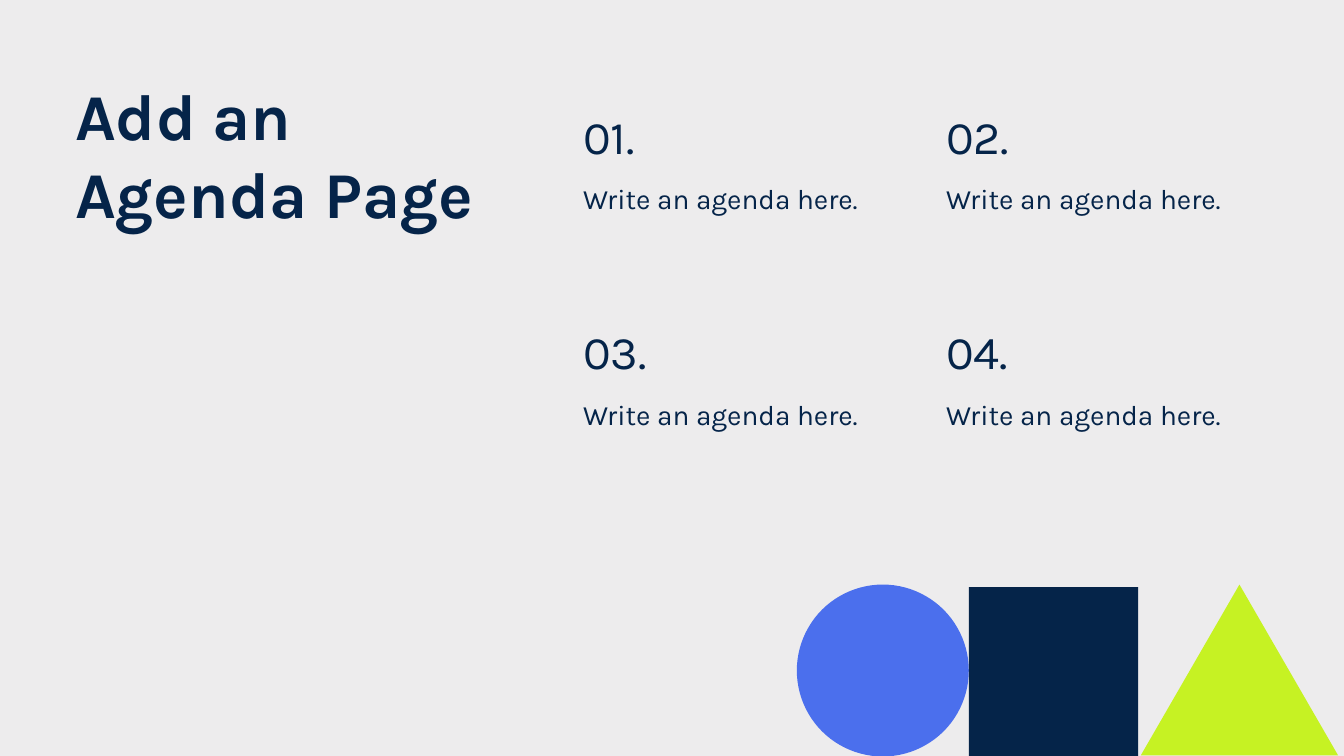
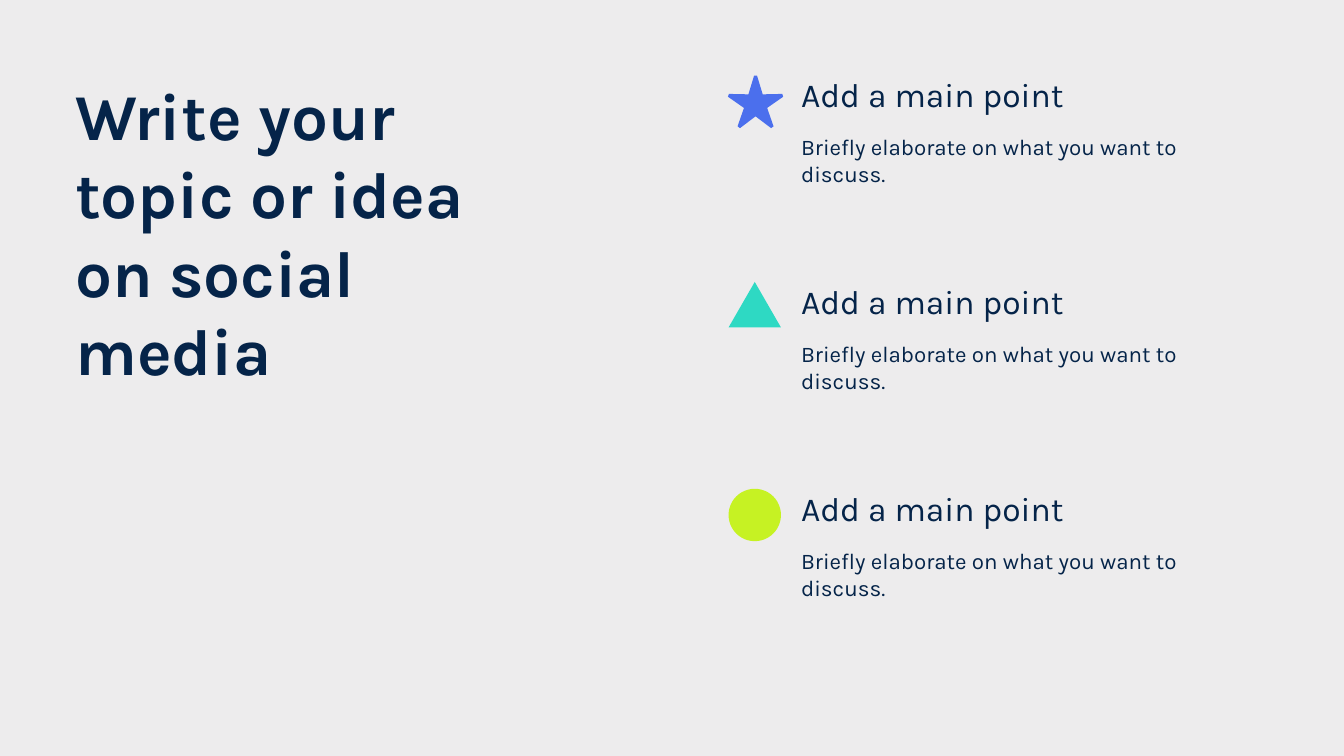
import math
from dataclasses import dataclass

import pptx
import pptx.dml.color
import pptx.enum.shapes
import pptx.enum.text
import pptx.shapes.autoshape
import pptx.slide
import pptx.util

Cm = pptx.util.Cm
Kind = pptx.enum.shapes.MSO_SHAPE

COLORS = {
    "background": "EDECED",
    "navy": "052449",
    "blue": "4B6FED",
    "lime": "C6F223",
    "teal": "2ED9C3",
}
FONT = "Karla"
MARGIN = 1.42


@dataclass(frozen=True)
class Figure:
    """A plain coloured preset shape, measured in centimetres."""
    kind: Kind
    left: float
    top: float
    width: float
    height: float
    color: str


@dataclass(frozen=True)
class EntryStyle:
    """Measures of a heading with a body line below it."""
    width: float
    heading_height: float
    heading_size: int
    body_offset: float
    body_height: float
    body_size: int


AGENDA_STYLE = EntryStyle(5.84, 1.07, 25, 1.41, 0.64, 15)
POINT_STYLE = EntryStyle(7.16, 0.76, 18, 1.12, 1.02, 12)


def rgb(name: str) -> pptx.dml.color.RGBColor:
    return pptx.dml.color.RGBColor.from_string(COLORS[name])


# Shared building blocks
def add_text(slide: pptx.slide.Slide, text: str, *, left: float, top: float,
             width: float, height: float, size: int, bold: bool = False) -> None:
    box = slide.shapes.add_textbox(Cm(left), Cm(top), Cm(width), Cm(height))
    frame = box.text_frame
    frame.word_wrap = True
    frame.auto_size = pptx.enum.text.MSO_AUTO_SIZE.SHAPE_TO_FIT_TEXT
    frame.margin_left = frame.margin_right = 0
    frame.margin_top = frame.margin_bottom = 0
    run = frame.paragraphs[0].add_run()
    run.text = text
    run.font.name = FONT
    run.font.size = pptx.util.Pt(size)
    run.font.bold = bold
    run.font.color.rgb = rgb("navy")


def add_entry(slide: pptx.slide.Slide, heading: str, body: str,
              left: float, top: float, style: EntryStyle) -> None:
    add_text(slide, heading, left=left, top=top, width=style.width,
             height=style.heading_height, size=style.heading_size)
    add_text(slide, body, left=left, top=top + style.body_offset, width=style.width,
             height=style.body_height, size=style.body_size)


def paint(shape: pptx.shapes.autoshape.Shape, color: str) -> None:
    shape.shadow.inherit = False
    shape.fill.solid()
    shape.fill.fore_color.rgb = rgb(color)
    shape.line.fill.background()


def add_figure(slide: pptx.slide.Slide, figure: Figure) -> None:
    shape = slide.shapes.add_shape(figure.kind, Cm(figure.left), Cm(figure.top),
                                   Cm(figure.width), Cm(figure.height))
    paint(shape, figure.color)


def add_blunt_star(slide: pptx.slide.Slide, center_x: float, center_y: float,
                   outer: float, inner: float, color: str) -> None:
    # Each arm has two close tip points and one inner corner
    points = []
    for arm in range(5):
        for radius, turn in ((outer, -3), (outer, 3), (inner, 36)):
            angle = math.radians(72 * arm + turn)
            points.append((Cm(center_x + radius * math.sin(angle)),
                           Cm(center_y - radius * math.cos(angle))))
    builder = slide.shapes.build_freeform(*points[0])
    builder.add_line_segments(points[1:], close=True)
    paint(builder.convert_to_shape(), color)


def add_titled_slide(presentation, title: str, width: float,
                     height: float) -> pptx.slide.Slide:
    slide = presentation.slides.add_slide(presentation.slide_layouts[6])
    slide.background.fill.solid()
    slide.background.fill.fore_color.rgb = rgb("background")
    add_text(slide, title, left=MARGIN, top=MARGIN, width=width, height=height,
             size=35, bold=True)
    return slide


# Slides
def build_agenda(presentation) -> None:
    slide = add_titled_slide(presentation, "Add an Agenda Page", 7.62, 3)
    for index in range(4):
        row, column = divmod(index, 2)
        add_entry(slide, f"{index + 1:02}.", "Write an agenda here.",
                  11.02 + 6.86 * column, 2.03 + 4.07 * row, AGENDA_STYLE)

    # Row of figures along the bottom edge
    for figure in (
        Figure(Kind.OVAL, 15.06, 11.05, 3.25, 3.25, "blue"),
        Figure(Kind.RECTANGLE, 18.31, 11.1, 3.2, 3.2, "navy"),
        Figure(Kind.ISOSCELES_TRIANGLE, 21.56, 11.05, 3.73, 3.23, "lime"),
    ):
        add_figure(slide, figure)


def build_main_points(presentation) -> None:
    slide = add_titled_slide(presentation, "Write your topic or idea on social media",
                             8.66, 4.5)
    row_tops = [1.4 + 3.91 * row for row in range(3)]
    for top in row_tops:
        add_entry(slide, "Add a main point",
                  "Briefly elaborate on what you want to discuss.",
                  15.14, top, POINT_STYLE)

    # One icon beside each point
    icon_left, icon_size, icon_drop = 13.77, 0.99, 0.02
    add_blunt_star(slide, 14.28, row_tops[0] + 0.57, 0.54, 0.23, "blue")
    add_figure(slide, Figure(Kind.ISOSCELES_TRIANGLE, icon_left, row_tops[1] + icon_drop,
                             icon_size, 0.86, "teal"))
    add_figure(slide, Figure(Kind.OVAL, icon_left, row_tops[2] + icon_drop,
                             icon_size, icon_size, "lime"))


def main() -> None:
    presentation = pptx.Presentation()
    presentation.slide_width = Cm(25.4)
    presentation.slide_height = Cm(14.29)
    build_agenda(presentation)
    build_main_points(presentation)
    presentation.save("out.pptx")


if __name__ == "__main__":
    main()
